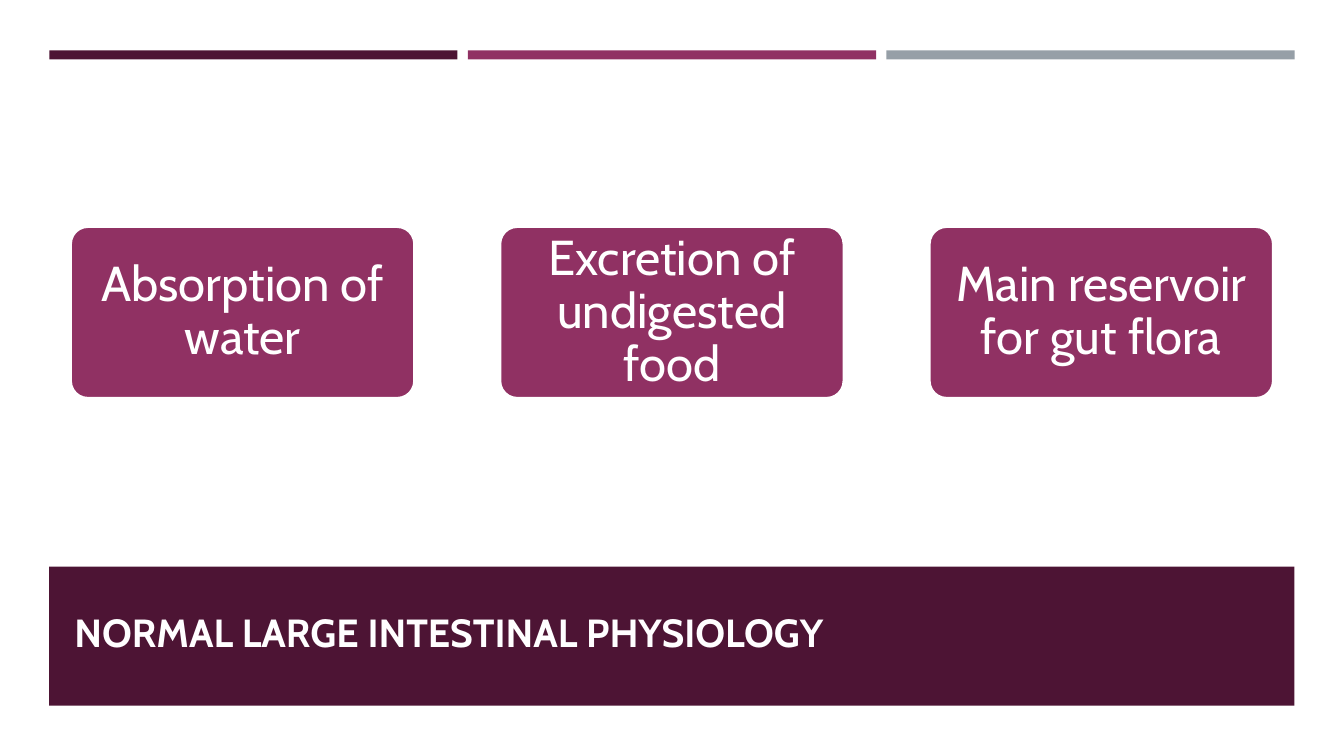
from dataclasses import dataclass

from pptx import Presentation
from pptx.dml.color import RGBColor
from pptx.enum.shapes import MSO_SHAPE
from pptx.enum.text import MSO_ANCHOR, MSO_AUTO_SIZE, PP_ALIGN
from pptx.util import Pt

RECT = MSO_SHAPE.RECTANGLE
ROUNDED = MSO_SHAPE.ROUNDED_RECTANGLE
LEFT, CENTER = PP_ALIGN.LEFT, PP_ALIGN.CENTER
MIDDLE, BOTTOM = MSO_ANCHOR.MIDDLE, MSO_ANCHOR.BOTTOM
TITLE_ONLY = 5


@dataclass(frozen=True)
class Theme:
    """Colours, font and type sizes of the slide."""
    dark: RGBColor = RGBColor.from_string("4D1434")
    plum: RGBColor = RGBColor.from_string("903163")
    grey: RGBColor = RGBColor.from_string("969FA7")
    white: RGBColor = RGBColor.from_string("FFFFFF")
    title_color: RGBColor = RGBColor.from_string("FFFEFF")
    font: str = "Cabin"
    title_size: int = 28
    card_size: int = 35


THEME = Theme()
FUNCTIONS = ["Absorption of water", "Excretion of undigested food",
             "Main reservoir for gut flora"]


def set_text(sp, text, *, size, color, bold=False, align=LEFT, anchor=MIDDLE,
             spacing=1.0, inset=(7.2, 3.6)):
    """Write one formatted paragraph into a shape."""
    tf = sp.text_frame
    tf.word_wrap = True
    tf.auto_size = MSO_AUTO_SIZE.NONE
    tf.vertical_anchor = anchor
    tf.margin_left = tf.margin_right = Pt(inset[0])
    tf.margin_top = tf.margin_bottom = Pt(inset[1])
    p = tf.paragraphs[0]
    p.alignment = align
    p.line_spacing = spacing
    r = p.add_run()
    r.text = text
    r.font.name = THEME.font
    r.font.size = Pt(size)
    r.font.bold = bold
    r.font.color.rgb = color


def add_block(s, kind, left, top, width, height, fill):
    """Add a flat filled shape without outline."""
    sp = s.shapes.add_shape(kind, Pt(left), Pt(top), Pt(width), Pt(height))
    sp.shadow.inherit = False
    sp.fill.solid()
    sp.fill.fore_color.rgb = fill
    sp.line.fill.background()
    return sp


def add_card(s, left, text):
    """Add a rounded card that names one function of the bowel."""
    sp = add_block(s, ROUNDED, left, 162, 245.5, 122.4, THEME.plum)
    sp.adjustments[0] = 0.1
    sp.line.color.rgb = THEME.white
    sp.line.width = Pt(1.75)
    set_text(sp, text, size=THEME.card_size, color=THEME.white, align=CENTER,
             spacing=0.9, inset=(5, 3.6))


def add_title(s, text):
    """Place the title placeholder in front of its banner."""
    sp = s.shapes.title
    s.shapes.element.append(sp.element)
    sp.left, sp.top, sp.width, sp.height = Pt(46), Pt(414.7), Pt(868), Pt(56.9)
    set_text(sp, text, size=THEME.title_size, color=THEME.title_color,
             bold=True, anchor=BOTTOM)


def main():
    """Build the slide and save it."""
    prs = Presentation()
    prs.slide_width, prs.slide_height = Pt(960), Pt(540)
    s = prs.slides.add_slide(prs.slide_layouts[TITLE_ONLY])
    for i, color in enumerate((THEME.dark, THEME.plum, THEME.grey)):
        add_block(s, RECT, 35.2 + 299 * i, 36, 291.6, 7.2, color)
    add_block(s, RECT, 0, 42.5, 960, 497.5, THEME.white)
    add_block(s, RECT, 35.2, 404.8, 889.4, 99.2, THEME.dark)
    for i, text in enumerate(FUNCTIONS):
        add_card(s, 50.5 + 306.7 * i, text)
    add_title(s, "NORMAL LARGE INTESTINAL PHYSIOLOGY")
    prs.save("out.pptx")


if __name__ == "__main__":
    main()
